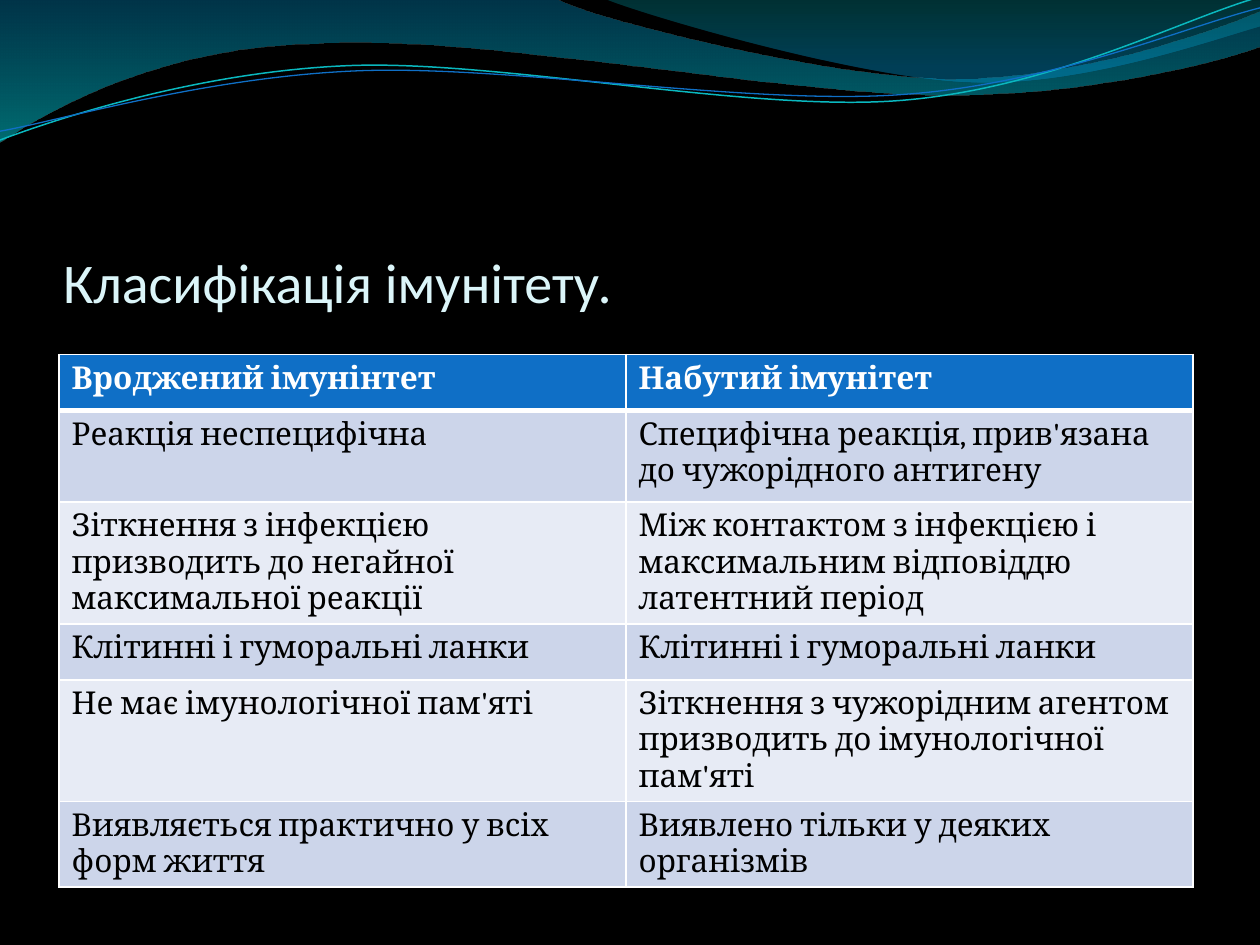
from math import cos, radians, sin

from lxml import etree
from pptx import Presentation
from pptx import util as u
from pptx.dml.color import RGBColor
from pptx.enum import text
from pptx.oxml.ns import qn

Pt = u.Pt
FINE = 100  # outline units per point

# Wave outlines in points: a start, then lines (x, y) or curves (two handles, end)
BAND = [(0, 0), (317, -1),
        (343, 12, 478, 45, 546, 45), (614, 45, 690, 19, 720, 6.5), (721, 26),
        (708, 32, 626, 55, 537, 54), (448, 54, 275, 20, 185, 24.5),
        (93, 26, 33, 60, -1, 81.5)]
CREST = [(345, -1), (366, 8, 491, 45, 554, 47), (616, 50, 692, 23, 720, 15),
         (720, 0)]
TEAL = [(0, 80), (35, 67, 114, 41, 199, 37.5), (284, 34, 427, 64, 513, 57.5),
        (600, 51, 675, 11, 719, -1.5)]
BLUE = [(0, 75), (34, 69, 118, 44, 204, 40.5), (290, 37, 430, 60.5, 516, 54),
        (602, 48, 678, 15, 720, 4.5)]
TILT = -2.7  # degrees by which the thin curves are turned

ROWS = [
    ("Вроджений імунінтет", "Набутий імунітет"),
    ("Реакція неспецифічна",
     "Специфічна реакція, прив'язана до чужорідного антигену"),
    ("Зіткнення з інфекцією призводить до негайної максимальної реакції",
     "Між контактом з інфекцією і максимальним відповіддю латентний період"),
    ("Клітинні і гуморальні ланки", "Клітинні і гуморальні ланки"),
    ("Не має імунологічної пам'яті",
     "Зіткнення з чужорідним агентом призводить до імунологічної пам'яті"),
    ("Виявляється практично у всіх форм життя",
     "Виявлено тільки у деяких організмів"),
]


def rgb(code):
    return RGBColor.from_string(code)


def pairs(seg):
    return list(zip(seg[::2], seg[1::2]))


def turn(path, angle, mid=(359.5, 41.5)):
    """Turn every point of a path about a centre."""
    si, co = sin(radians(angle)), cos(radians(angle))
    out = []
    for seg in path:
        flat = []
        for x, y in pairs(seg):
            dx, dy = x - mid[0], y - mid[1]
            flat += [mid[0] + co * dx - si * dy, mid[1] + si * dx + co * dy]
        out.append(tuple(flat))
    return out


def add_free(slide, path, close):
    """Draw the end points, then bend the curved segments."""
    ends = [(x * FINE, y * FINE) for *_, x, y in path]
    pen = slide.shapes.build_freeform(*ends[0], scale=Pt(1) / FINE)
    pen.add_line_segments(ends[1:], close=close)
    shape = pen.convert_to_shape()
    shape.shadow.inherit = False
    left, top = (min(round(p[k]) for p in ends) for k in (0, 1))
    lines = list(shape._element.iter(qn("a:lnTo")))
    for line, seg in zip(lines, path[1:]):
        if len(seg) == 2:
            continue
        bend = etree.Element(qn("a:cubicBezTo"))
        for x, y in pairs(seg):
            etree.SubElement(bend, qn("a:pt"), x=str(round(x * FINE) - left),
                             y=str(round(y * FINE) - top))
        line.getparent().replace(line, bend)
    return shape


def add_wave(slide, path, stops):
    """Filled wave; stops hold place, colour and opacity in percent."""
    shape = add_free(slide, path, True)
    shape.line.fill.background()
    shape.fill.gradient()
    shape.fill.gradient_angle = 270
    for stop, (pos, code, _) in zip(shape.fill.gradient_stops, stops):
        stop.position = pos
        stop.color.rgb = rgb(code)
    tints = shape._element.spPr.iter(qn("a:srgbClr"))
    for tint, (_, _, part) in zip(tints, stops):
        etree.SubElement(tint, qn("a:alpha"), val=str(part * 1000))


def add_curve(slide, path, code, width):
    shape = add_free(slide, turn(path, -TILT), False)
    shape.rotation = TILT
    shape.fill.background()
    shape.line.color.rgb = rgb(code)
    shape.line.width = Pt(width)


def add_run(para, words, size, face, code, bold=False):
    run = para.add_run()
    run.text = words
    font = run.font
    font.size, font.name, font.bold = Pt(size), face, bold
    font.color.rgb = rgb(code)


def set_title(slide, words):
    box = slide.shapes.title
    box.left, box.top, box.width, box.height = Pt(36), Pt(73.5), Pt(648), Pt(106.5)
    frame = box.text_frame
    frame.word_wrap = True
    frame.auto_size = text.MSO_AUTO_SIZE.NONE
    frame.vertical_anchor = text.MSO_ANCHOR.BOTTOM
    frame.margin_left = frame.margin_right = frame.margin_bottom = 0
    frame.margin_top = Pt(3.6)
    para = frame.paragraphs[0]
    para.alignment = text.PP_ALIGN.LEFT
    add_run(para, words, 32, "Calibri", "DBF5F9")


def set_edge(cell, side, width):
    props = cell._tc.get_or_add_tcPr()
    line = etree.SubElement(props, qn("a:ln" + side), w=str(Pt(width)))
    fill = etree.SubElement(line, qn("a:solidFill"))
    etree.SubElement(fill, qn("a:srgbClr"), val="FFFFFF")


def add_grid(slide, rows):
    frame = slide.shapes.add_table(len(rows), 2, Pt(33.75), Pt(202.5),
                                   Pt(648), Pt(288.5))
    grid = frame.table
    for r, row in enumerate(rows):
        grid.rows[r].height = Pt(52.5 if r == 1 else 32)
        head = r == 0
        back = "0F6FC6" if head else ("E7EBF5", "CCD5EA")[r % 2]
        for c, words in enumerate(row):
            cell = grid.cell(r, c)
            # The rule under the header is thicker
            for side, width in (("L", 1), ("R", 1), ("T", 3 if r == 1 else 1),
                                ("B", 3 if head else 1)):
                set_edge(cell, side, width)
            cell.fill.solid()
            cell.fill.fore_color.rgb = rgb(back)
            add_run(cell.text_frame.paragraphs[0], words, 18, "Cambria",
                    "FFFFFF" if head else "000000", head)
    frame.height = Pt(288.5)


def main():
    deck = Presentation()
    deck.slide_width, deck.slide_height = Pt(720), Pt(540)
    slide = deck.slides.add_slide(deck.slide_layouts[5])
    slide.background.fill.solid()
    slide.background.fill.fore_color.rgb = rgb("000000")

    # Waves along the top
    add_wave(slide, BAND, [(0, "0074A1", 45), (1, "00C6CF", 55)])
    add_wave(slide, CREST, [(0, "00A1A9", 30), (0.8, "008BBF", 45)])
    add_curve(slide, TEAL, "0AB8BF", 0.85)
    add_curve(slide, BLUE, "0F6FC6", 0.75)

    # Title and comparison table
    set_title(slide, "Класифікація імунітету.")
    add_grid(slide, ROWS)
    deck.save("out.pptx")


if __name__ == "__main__":
    main()
